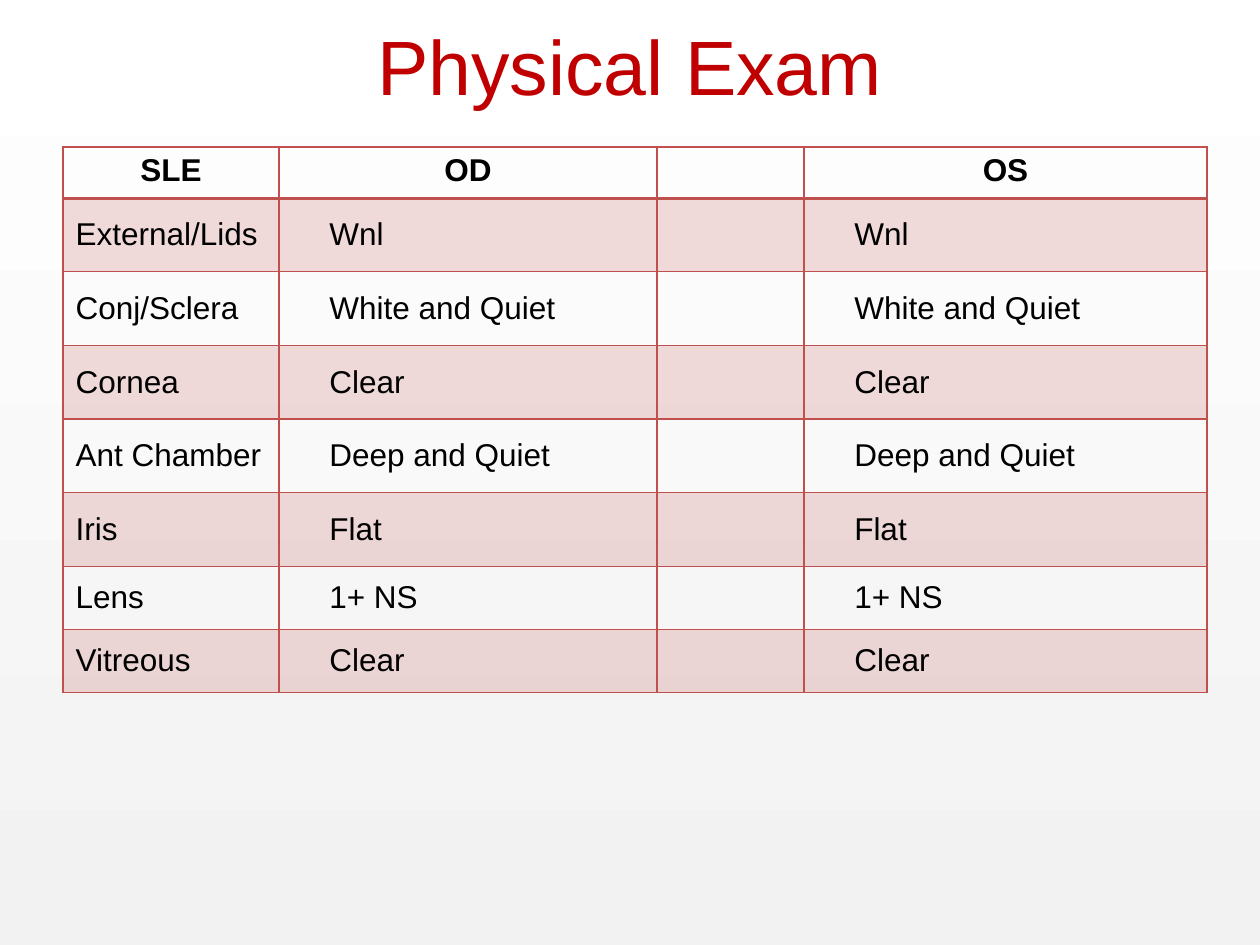
from dataclasses import dataclass

from lxml import etree
from pptx import Presentation
from pptx.dml.color import RGBColor
from pptx.enum.shapes import MSO_SHAPE
from pptx.enum.text import MSO_ANCHOR, PP_ALIGN
from pptx.oxml.ns import qn
from pptx.util import Pt

RECTANGLE = MSO_SHAPE.RECTANGLE
CENTER, LEFT = PP_ALIGN.CENTER, PP_ALIGN.LEFT
TOP, MIDDLE = MSO_ANCHOR.TOP, MSO_ANCHOR.MIDDLE


@dataclass(frozen=True)
class Theme:
    font: str = "Arial"
    title_size: float = 44
    body_size: float = 18
    title: str = "C00000"
    text: str = "000000"
    accent: str = "C0504D"
    band_opacity: int = 20
    page_bottom: str = "F2F2F2"
    page_top: str = "FFFFFF"
    rule: float = 1
    header_rule: float = 2
    finding_indent: float = 28.8


class ExamSlide:
    def __init__(self, slide, theme):
        self.slide = slide
        self.theme = theme

    def background(self, width, height):
        page = self.slide.shapes.add_shape(RECTANGLE, 0, 0, width, height)
        page.shadow.inherit = False
        page.line.fill.background()
        page.fill.gradient()
        page.fill.gradient_angle = 90
        colors = (self.theme.page_bottom, self.theme.page_top)
        for position, (stop, color) in enumerate(zip(page.fill.gradient_stops, colors)):
            stop.position = position
            stop.color.rgb = RGBColor.from_string(color)

    def add_text(self, paragraph, text, size, color, alignment, bold=False):
        paragraph.alignment = alignment
        run = paragraph.add_run()
        run.text = text
        style = {"name": self.theme.font, "size": Pt(size), "bold": bold}
        for attribute, value in style.items():
            setattr(run.font, attribute, value)
        run.font.color.rgb = RGBColor.from_string(color)

    def title(self, text, left, top, width, height):
        heading = self.slide.shapes.add_textbox(Pt(left), Pt(top), Pt(width), Pt(height))
        frame = heading.text_frame
        frame.word_wrap = True
        frame.vertical_anchor = MIDDLE
        self.add_text(frame.paragraphs[0], text, self.theme.title_size, self.theme.title, CENTER)

    def band(self, cell):
        cell.fill.solid()
        cell.fill.fore_color.rgb = RGBColor.from_string(self.theme.accent)
        color = cell._tc.tcPr.find(f".//{qn('a:srgbClr')}")
        etree.SubElement(color, qn("a:alpha"), val=str(self.theme.band_opacity * 1000))

    def borders(self, cell, widths):
        properties = cell._tc.get_or_add_tcPr()
        for index, (side, width) in enumerate(widths.items()):
            line = etree.Element(qn(f"a:ln{side}"), w=str(Pt(width)))
            fill = etree.SubElement(line, qn("a:solidFill"))
            etree.SubElement(fill, qn("a:srgbClr"), val=self.theme.accent)
            properties.insert(index, line)

    def table(self, rows, left, top, column_widths, row_heights):
        theme = self.theme
        table = self.slide.shapes.add_table(
            len(rows), len(column_widths), Pt(left), Pt(top),
            Pt(sum(column_widths)), Pt(sum(row_heights))).table
        for column, width in zip(table.columns, column_widths):
            column.width = Pt(width)
        for row, height in zip(table.rows, row_heights):
            row.height = Pt(height)
        for r, texts in enumerate(rows):
            header = r == 0
            for c, text in enumerate(texts):
                cell = table.cell(r, c)
                cell.vertical_anchor = TOP if header else MIDDLE
                if r % 2:
                    self.band(cell)
                else:
                    cell.fill.background()
                self.borders(cell, {
                    "L": theme.rule,
                    "R": theme.rule,
                    "T": theme.header_rule if r == 1 else theme.rule,
                    "B": theme.header_rule if header else theme.rule,
                })
                if not text:
                    continue
                if c and not header:
                    cell.margin_left = Pt(theme.finding_indent)
                self.add_text(cell.text_frame.paragraphs[0], text, theme.body_size,
                              theme.text, CENTER if header else LEFT, header)


def main():
    deck = Presentation()
    deck.slide_width, deck.slide_height = Pt(720), Pt(540)
    exam = ExamSlide(deck.slides.add_slide(deck.slide_layouts[6]), Theme())
    exam.background(deck.slide_width, deck.slide_height)
    exam.title("Physical Exam", 36, -8, 648, 90)

    findings = {
        "External/Lids": "Wnl",
        "Conj/Sclera": "White and Quiet",
        "Cornea": "Clear",
        "Ant Chamber": "Deep and Quiet",
        "Iris": "Flat",
        "Lens": "1+ NS",
        "Vitreous": "Clear",
    }
    rows = [("SLE", "OD", "", "OS")]
    rows += [(part, finding, "", finding) for part, finding in findings.items()]
    exam.table(rows, 36, 84, [123.4, 216, 84, 230.4], [29.2] + [42.1] * 5 + [36] * 2)
    deck.save("out.pptx")


if __name__ == "__main__":
    main()
